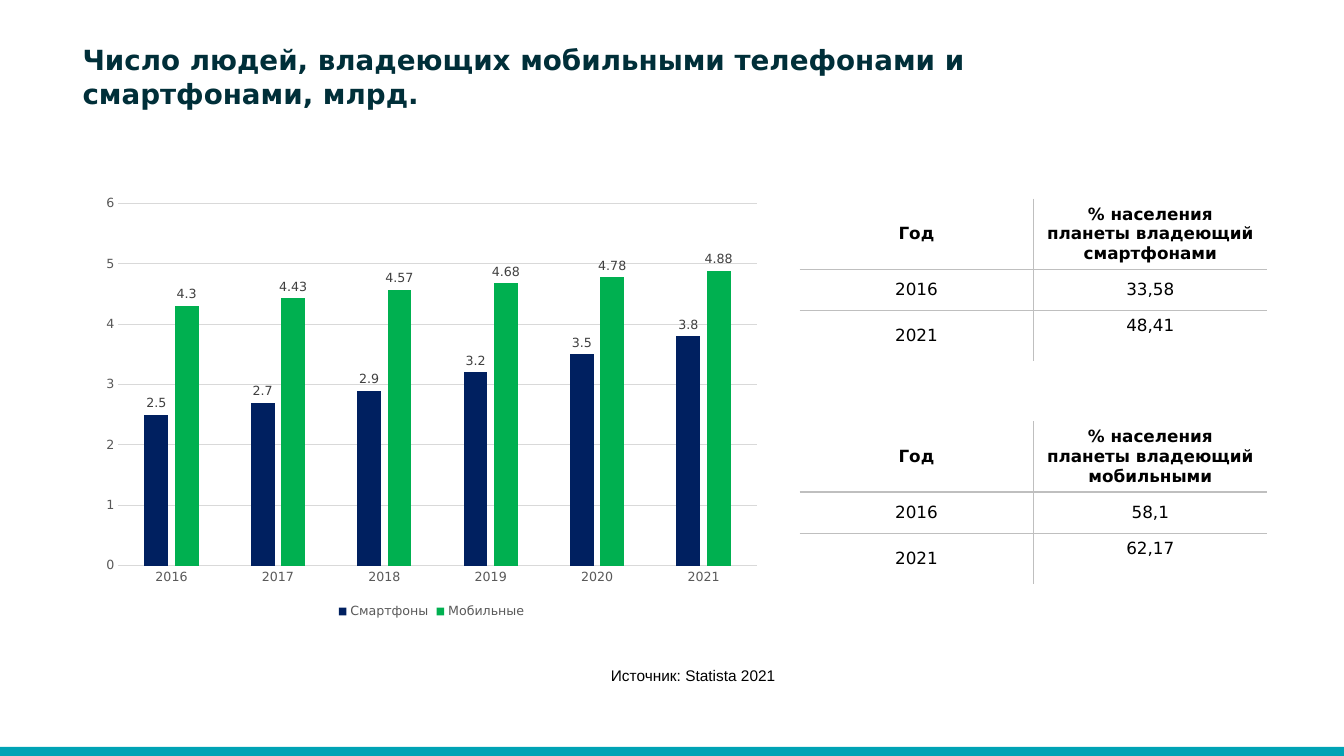
from dataclasses import dataclass

from lxml import etree
from pptx import Presentation
from pptx.chart.data import CategoryChartData
from pptx.dml.color import RGBColor
from pptx.enum.chart import XL_CHART_TYPE, XL_LABEL_POSITION, XL_LEGEND_POSITION, XL_TICK_MARK
from pptx.enum.shapes import MSO_SHAPE
from pptx.enum.text import MSO_ANCHOR, PP_ALIGN
from pptx.oxml.ns import qn
from pptx.slide import Slide
from pptx.text.text import Font
from pptx.util import Inches, Pt

RECTANGLE = MSO_SHAPE.RECTANGLE
COLUMNS = XL_CHART_TYPE.COLUMN_CLUSTERED
NO_TICK = XL_TICK_MARK.NONE
OUTSIDE_END = XL_LABEL_POSITION.OUTSIDE_END
BOTTOM = XL_LEGEND_POSITION.BOTTOM
MIDDLE = MSO_ANCHOR.MIDDLE
TOP = MSO_ANCHOR.TOP
CENTER = PP_ALIGN.CENTER


@dataclass(frozen=True)
class Theme:
    main_font: str = "DejaVu Sans"
    source_font: str = "Arial"
    title: str = "002F39"
    band: str = "00A3B5"
    text: str = "000000"
    axis_text: str = "595959"
    label_text: str = "404040"
    grid: str = "D9D9D9"
    border: str = "BFBFBF"
    title_size: float = 19.8
    table_size: float = 12
    source_size: float = 11
    chart_size: float = 9
    grid_width: float = 0.75
    border_width: float = 1


@dataclass(frozen=True)
class Box:
    left: float
    top: float
    width: float
    height: float

    def lengths(self) -> tuple[Inches, Inches, Inches, Inches]:
        return Inches(self.left), Inches(self.top), Inches(self.width), Inches(self.height)


@dataclass(frozen=True)
class Series:
    name: str
    values: tuple[float, ...]
    color: str


@dataclass(frozen=True)
class ShareTable:
    top: float
    rows: tuple[tuple[str, str], ...]


THEME = Theme()
YEARS = ("2016", "2017", "2018", "2019", "2020", "2021")
OWNERS = (
    Series("Смартфоны", (2.5, 2.7, 2.9, 3.2, 3.5, 3.8), "002060"),
    Series("Мобильные", (4.3, 4.43, 4.57, 4.68, 4.78, 4.88), "00B050"),
)
SHARE_TABLES = (
    ShareTable(1.97, (("Год", "% населения планеты владеющий смартфонами"),
                      ("2016", "33,58"), ("2021", "48,41"))),
    ShareTable(4.18, (("Год", "% населения планеты владеющий мобильными"),
                      ("2016", "58,1"), ("2021", "62,17"))),
)
TABLE_LEFT = 7.93
COLUMN_WIDTH = 2.32
ROW_HEIGHTS = (0.69, 0.41, 0.49)
RAISED_MARGIN = 0.25


def style_font(font: Font, size: float, color: str, name: str = THEME.main_font,
               bold: bool = False) -> None:
    font.name = name
    font.size = Pt(size)
    font.bold = bold
    font.color.rgb = RGBColor.from_string(color)


def add_text(slide: Slide, box: Box, text: str, size: float, color: str,
             name: str, bold: bool = False) -> None:
    frame = slide.shapes.add_textbox(*box.lengths()).text_frame
    frame.word_wrap = True
    frame.vertical_anchor = TOP
    run = frame.paragraphs[0].add_run()
    run.text = text
    style_font(run.font, size, color, name, bold)


def add_band(slide: Slide, box: Box) -> None:
    band = slide.shapes.add_shape(RECTANGLE, *box.lengths())
    band.shadow.inherit = False
    band.fill.solid()
    band.fill.fore_color.rgb = RGBColor.from_string(THEME.band)
    band.line.fill.background()


def add_owners_chart(slide: Slide, box: Box) -> None:
    data = CategoryChartData()
    data.categories = YEARS
    for series in OWNERS:
        data.add_series(series.name, series.values)
    chart = slide.shapes.add_chart(COLUMNS, *box.lengths(), data).chart
    style_font(chart.font, THEME.chart_size, THEME.axis_text)
    chart.has_title = False
    chart.has_legend = True
    chart.legend.position = BOTTOM
    chart.legend.include_in_layout = False
    style_font(chart.legend.font, THEME.chart_size, THEME.axis_text)

    for axis in (chart.category_axis, chart.value_axis):
        axis.major_tick_mark = axis.minor_tick_mark = NO_TICK
        style_font(axis.tick_labels.font, THEME.chart_size, THEME.axis_text)
    chart.value_axis.minimum_scale = 0
    chart.value_axis.maximum_scale = 6
    chart.value_axis.major_unit = 1
    chart.value_axis.format.line.fill.background()
    for part in (chart.category_axis, chart.value_axis.major_gridlines):
        part.format.line.color.rgb = RGBColor.from_string(THEME.grid)
        part.format.line.width = Pt(THEME.grid_width)

    plot = chart.plots[0]
    plot.vary_by_categories = False
    plot.gap_width = 219
    plot.overlap = -27
    for drawn, series in zip(plot.series, OWNERS):
        drawn.format.fill.solid()
        drawn.format.fill.fore_color.rgb = RGBColor.from_string(series.color)
        labels = drawn.data_labels
        labels.show_value = True
        labels.position = OUTSIDE_END
        style_font(labels.font, THEME.chart_size, THEME.label_text)


def set_borders(cell, visible: dict[str, bool]) -> None:
    """Draw the sides marked True and blank the others; call before filling."""
    properties = cell._tc.get_or_add_tcPr()
    for side, shown in visible.items():
        line = etree.SubElement(properties, qn(f"a:ln{side}"))
        line.set("w", str(Pt(THEME.border_width)))
        if shown:
            fill = etree.SubElement(line, qn("a:solidFill"))
            etree.SubElement(fill, qn("a:srgbClr")).set("val", THEME.border)
        else:
            etree.SubElement(line, qn("a:noFill"))


def add_share_table(slide: Slide, share: ShareTable) -> None:
    row_count, column_count = len(share.rows), len(share.rows[0])
    box = Box(TABLE_LEFT, share.top, COLUMN_WIDTH * column_count, sum(ROW_HEIGHTS))
    table = slide.shapes.add_table(row_count, column_count, *box.lengths()).table
    table.first_row = table.horz_banding = False
    for column in table.columns:
        column.width = Inches(COLUMN_WIDTH)
    for row, height in zip(table.rows, ROW_HEIGHTS):
        row.height = Inches(height)
    last_row, last_column = row_count - 1, column_count - 1
    for i, texts in enumerate(share.rows):
        for j, text in enumerate(texts):
            cell = table.cell(i, j)
            set_borders(cell, {"L": j > 0, "R": j < last_column,
                               "T": i > 0, "B": i < last_row})
            cell.fill.background()
            cell.vertical_anchor = MIDDLE
            if (i, j) == (last_row, last_column):
                cell.margin_bottom = Inches(RAISED_MARGIN)
            paragraph = cell.text_frame.paragraphs[0]
            paragraph.alignment = CENTER
            run = paragraph.add_run()
            run.text = text
            style_font(run.font, THEME.table_size, THEME.text, bold=i == 0)


def main() -> None:
    presentation = Presentation()
    presentation.slide_width = Inches(13.33)
    presentation.slide_height = Inches(7.5)
    slide = presentation.slides.add_slide(presentation.slide_layouts[6])
    add_text(slide, Box(0.72, 0.38, 9.81, 0.33),
             "Число людей, владеющих мобильными телефонами и смартфонами, млрд.",
             THEME.title_size, THEME.title, THEME.main_font, bold=True)
    add_band(slide, Box(0, 7.41, 13.33, 0.09))
    add_owners_chart(slide, Box(0.92, 1.86, 6.72, 4.32))
    for share in SHARE_TABLES:
        add_share_table(slide, share)
    add_text(slide, Box(5.96, 6.56, 2.68, 0.29), "Источник: Statista 2021",
             THEME.source_size, THEME.text, THEME.source_font)
    presentation.save("out.pptx")


if __name__ == "__main__":
    main()
